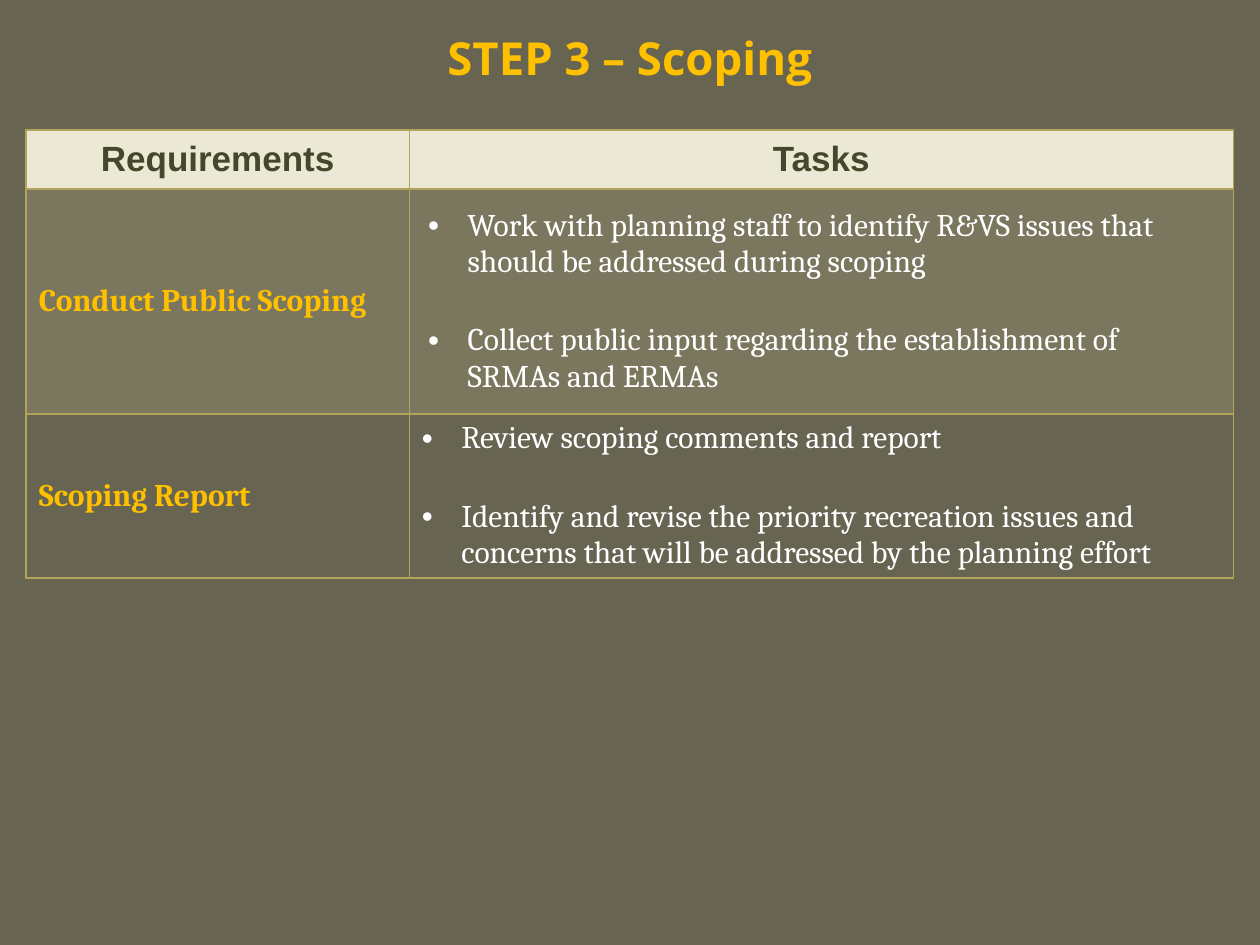
from dataclasses import dataclass

from lxml import etree
from pptx import Presentation
from pptx.dml.color import RGBColor
from pptx.enum.text import MSO_ANCHOR, MSO_AUTO_SIZE, PP_ALIGN
from pptx.oxml import parse_xml
from pptx.oxml.ns import nsdecls, qn
from pptx.util import Pt

MIDDLE = MSO_ANCHOR.MIDDLE
LEFT, CENTER = PP_ALIGN.LEFT, PP_ALIGN.CENTER
COLORS = {
    "background": "676451",
    "accent": "FFC000",
    "body": "FFFFFF",
    "header": "45472B",
    "header_fill": "EBE8D5",
    "band_fill": "CEC597",
    "border": "B1A35A",
}
BAND_OPACITY = 20
COLUMN_WIDTHS = (218.9, 470.9)
HEADER_HEIGHT = 33.7
BULLET_INDENT = 22.5


@dataclass(frozen=True)
class Step:
    requirement: str
    tasks: tuple[str, ...]
    height: float
    banded: bool = False
    task_margin: float | None = None


STEPS = (
    Step(
        "Conduct Public Scoping",
        (
            "Work with planning staff to identify R&VS issues that should be addressed during scoping",
            "Collect public input regarding the establishment of SRMAs and ERMAs",
        ),
        height=128.6,
        banded=True,
        task_margin=10.8,
    ),
    Step(
        "Scoping Report",
        (
            "Review scoping comments and report",
            "Identify and revise the priority recreation issues and concerns "
            "that will be addressed by the planning effort",
        ),
        height=93.4,
    ),
)


def color(name: str) -> RGBColor:
    return RGBColor.from_string(COLORS[name])


def write(para, text: str, *, size: float, font: str, ink: str, bold: bool = False,
          align=LEFT, before: float = 0, after: float = 0, bullet: bool = False) -> None:
    para.alignment = align
    para.space_before, para.space_after = Pt(before), Pt(after)
    if bullet:
        properties = para._p.get_or_add_pPr()
        properties.set("marL", str(Pt(BULLET_INDENT)))
        properties.set("indent", str(-Pt(BULLET_INDENT)))
        etree.SubElement(properties, qn("a:buFont")).set("typeface", "Arial")
        etree.SubElement(properties, qn("a:buChar")).set("char", "•")
    span = para.add_run()
    span.text = text
    span.font.size, span.font.name, span.font.bold = Pt(size), font, bold
    span.font.color.rgb = color(ink)


def style_cell(cell, fill: str | None = None, opacity: int = 100) -> None:
    cell.vertical_anchor = MIDDLE
    properties = cell._tc.get_or_add_tcPr()
    for side in ("lnL", "lnR", "lnT", "lnB"):
        properties.append(parse_xml(
            f'<a:{side} {nsdecls("a")} w="{Pt(1)}"><a:solidFill>'
            f'<a:srgbClr val="{COLORS["border"]}"/></a:solidFill></a:{side}>'
        ))
    if fill is None:
        cell.fill.background()
        return
    cell.fill.solid()
    cell.fill.fore_color.rgb = color(fill)
    if opacity < 100:
        shade = properties.find(qn("a:solidFill")).find(qn("a:srgbClr"))
        etree.SubElement(shade, qn("a:alpha")).set("val", str(opacity * 1000))


def add_title(page, text: str) -> None:
    title = page.shapes.title
    title.left, title.top, title.width, title.height = Pt(0), Pt(5.8), Pt(720), Pt(54)
    frame = title.text_frame
    frame.auto_size = MSO_AUTO_SIZE.NONE
    frame.vertical_anchor = MIDDLE
    write(frame.paragraphs[0], text, size=26, font="Open Sans", ink="accent",
          bold=True, align=CENTER)


def fill_step(row, step: Step) -> None:
    row.height = Pt(step.height)
    for cell in row.cells:
        style_cell(cell, "band_fill" if step.banded else None, BAND_OPACITY)
    name, tasks = row.cells
    write(name.text_frame.paragraphs[0], step.requirement, size=18, font="Cambria",
          ink="accent", bold=True, after=6)
    if step.task_margin is not None:
        margin = Pt(step.task_margin)
        tasks.margin_left = tasks.margin_right = margin
        tasks.margin_top = tasks.margin_bottom = margin
    frame = tasks.text_frame
    for index, task in enumerate(step.tasks):
        para = frame.add_paragraph() if index else frame.paragraphs[0]
        write(para, task, size=18, font="Cambria", ink="body",
              before=12 if index else 0, after=12, bullet=True)


def add_step_table(page) -> None:
    height = HEADER_HEIGHT + sum(step.height for step in STEPS)
    table = page.shapes.add_table(
        len(STEPS) + 1, len(COLUMN_WIDTHS), Pt(15), Pt(74.2),
        Pt(sum(COLUMN_WIDTHS)), Pt(height),
    ).table
    for column, width in zip(table.columns, COLUMN_WIDTHS):
        column.width = Pt(width)
    header, *rows = table.rows
    header.height = Pt(HEADER_HEIGHT)
    for cell, text in zip(header.cells, ("Requirements", "Tasks")):
        style_cell(cell, "header_fill")
        write(cell.text_frame.paragraphs[0], text, size=20, font="Arial", ink="header",
              bold=True, align=CENTER, after=6)
    for row, step in zip(rows, STEPS):
        fill_step(row, step)


def main() -> None:
    deck = Presentation()
    deck.slide_width, deck.slide_height = Pt(720), Pt(540)
    page = deck.slides.add_slide(deck.slide_layouts[5])
    page.background.fill.solid()
    page.background.fill.fore_color.rgb = color("background")
    add_title(page, "STEP 3 – Scoping")
    add_step_table(page)
    deck.save("out.pptx")


if __name__ == "__main__":
    main()
